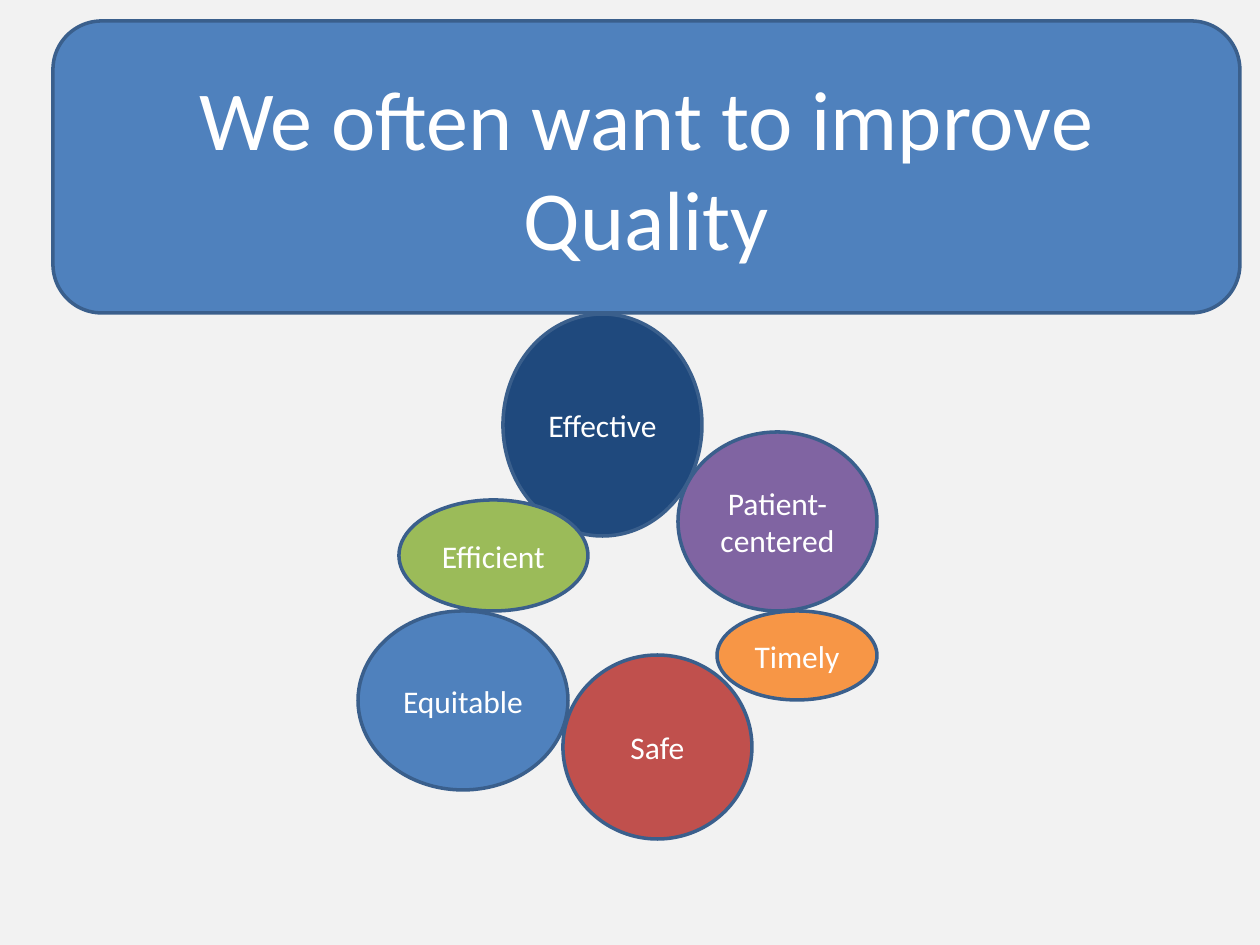
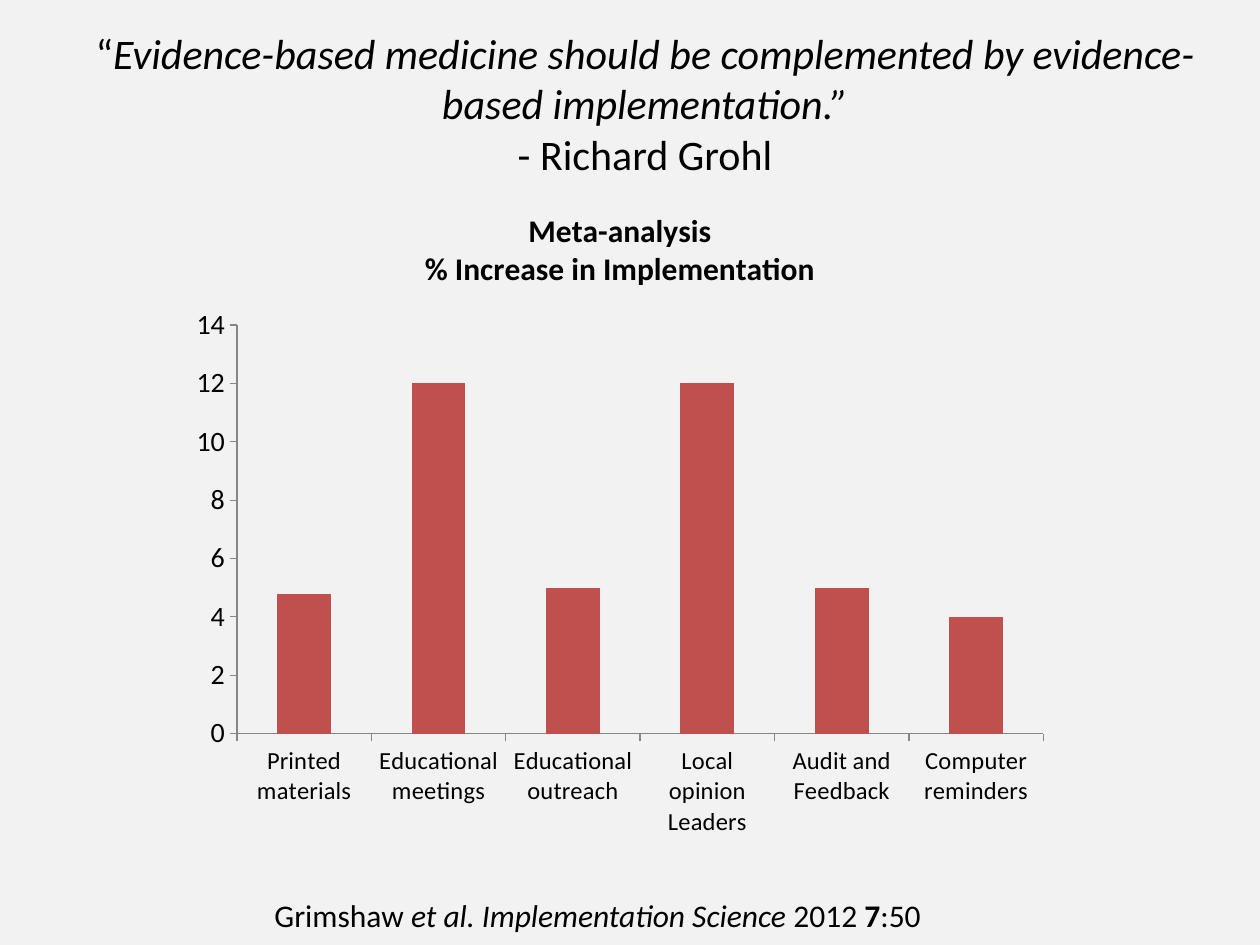
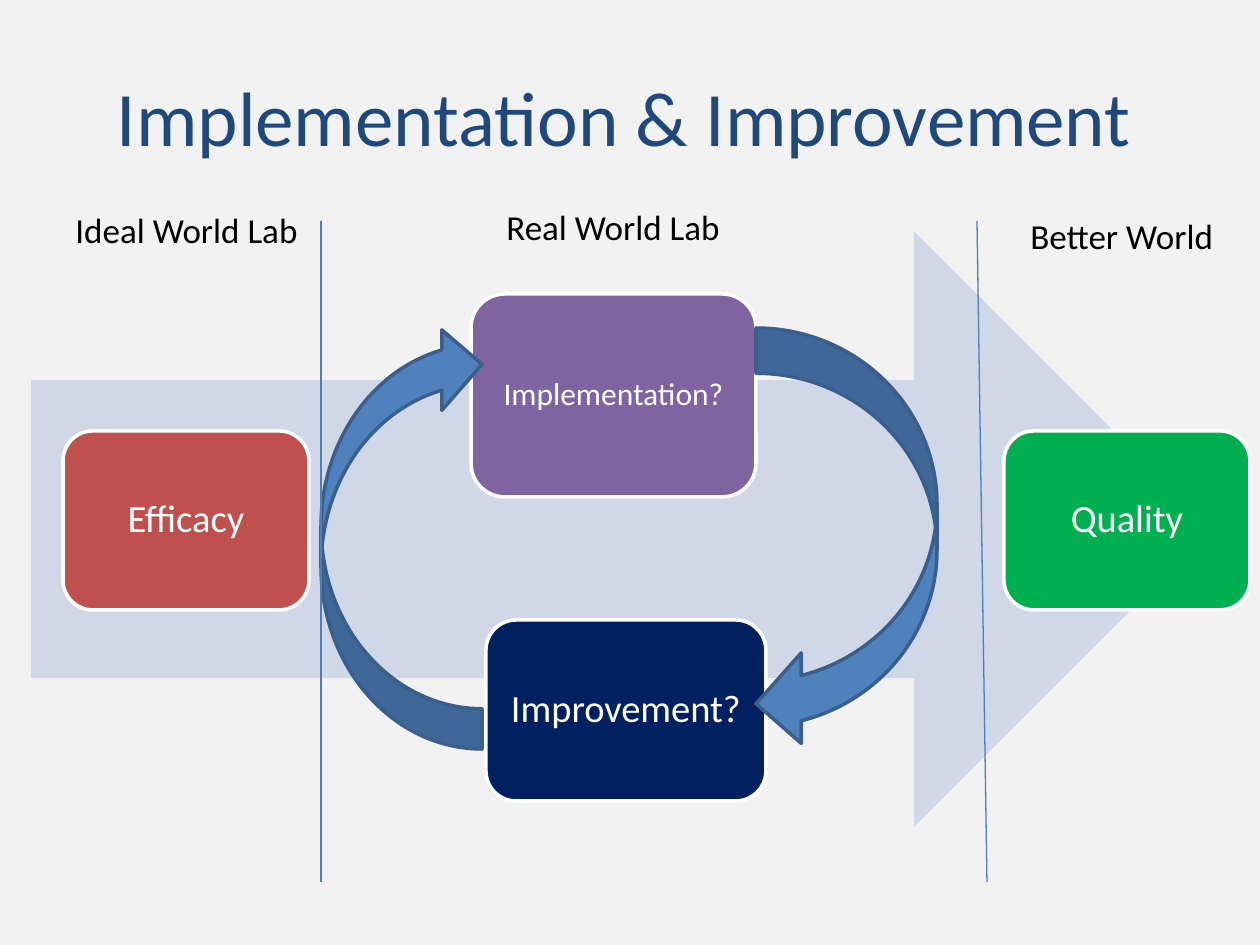
import pptx
import pptx.chart.data
import pptx.dml.color
import pptx.enum.chart
import pptx.enum.shapes
import pptx.enum.text
import pptx.oxml
import pptx.util

SHAPE = pptx.enum.shapes.MSO_SHAPE
ANCHOR = pptx.enum.text.MSO_ANCHOR
ALIGN = pptx.enum.text.PP_ALIGN
TICK = pptx.enum.chart.XL_TICK_MARK

# Shared look
FONT = "Calibri"
EMU_PER_PX = 914400 / 126
SLIDE_W, SLIDE_H = 1260, 945
TITLE_ONLY, BLANK = 5, 6
COLORS = {
    "background": "F2F2F2", "text": "000000", "white": "FFFFFF",
    "outline": "3A5F8C", "blue": "4F81BD", "dark_blue": "1F497D",
    "navy": "002060", "purple": "8064A2", "orange": "F79646",
    "light_green": "9BBB59", "green": "00B050", "red": "C0504D",
    "pale_blue": "D0D8E8", "divider": "4B7EBC", "axis": "868686",
}


def px(n):
    return round(n * EMU_PER_PX)


def rgb(name):
    return pptx.dml.color.RGBColor.from_string(COLORS[name])


def apply(obj, values):
    for name, value in values.items():
        setattr(obj, name, value)


def style_font(font, size, color="text", **extra):
    apply(font, {"name": FONT, "size": pptx.util.Pt(size), **extra})
    font.color.rgb = rgb(color)


def write_text(tf, paragraphs, size, color="text", align=ALIGN.LEFT,
               anchor=ANCHOR.TOP, spacing=1.0):
    """Each paragraph is a list of (text, font values) runs."""
    apply(tf, {"word_wrap": True, "vertical_anchor": anchor,
               "auto_size": pptx.enum.text.MSO_AUTO_SIZE.NONE})
    for i, runs in enumerate(paragraphs):
        p = tf.paragraphs[0] if i == 0 else tf.add_paragraph()
        apply(p, {"alignment": align, "line_spacing": spacing})
        for text, values in runs:
            r = p.add_run()
            r.text = text
            style_font(r.font, size, color, **values)


def add_title(slide, box, paragraphs, size, color="text", anchor=ANCHOR.MIDDLE):
    sp = slide.shapes.title
    apply(sp, dict(zip(("left", "top", "width", "height"), map(px, box))))
    write_text(sp.text_frame, paragraphs, size, color, ALIGN.CENTER, anchor)


def add_label(slide, box, runs, size):
    sp = slide.shapes.add_textbox(*map(px, box))
    write_text(sp.text_frame, [runs], size)


def add_block(slide, kind, box, fill, line="outline", text="", size=18,
              spacing=1.0):
    sp = slide.shapes.add_shape(kind, *map(px, box))
    sp.shadow.inherit = False
    sp.fill.solid()
    sp.fill.fore_color.rgb = rgb(fill)
    if line:
        sp.line.color.rgb = rgb(line)
        sp.line.width = pptx.util.Pt(2)
    else:
        sp.line.fill.background()
    if text:
        write_text(sp.text_frame, [[(text, {})]], size, "white", ALIGN.CENTER,
                   ANCHOR.MIDDLE, spacing)
    return sp


def add_divider(slide, x1, y1, x2, y2):
    line = slide.shapes.add_connector(
        pptx.enum.shapes.MSO_CONNECTOR.STRAIGHT, *map(px, (x1, y1, x2, y2)))
    line.line.color.rgb = rgb("divider")
    line.line.width = pptx.util.Pt(0.75)
    spPr = line._element.spPr
    spPr.append(pptx.oxml.parse_xml(
        '<a:effectLst xmlns:a='
        '"http://schemas.openxmlformats.org/drawingml/2006/main"/>'))


def add_column_chart(slide, box, title_lines, values):
    data = pptx.chart.data.CategoryChartData()
    data.categories = list(values)
    data.add_series("Series 1", list(values.values()))
    chart = slide.shapes.add_chart(
        pptx.enum.chart.XL_CHART_TYPE.COLUMN_CLUSTERED,
        *map(px, box), data).chart
    chart.has_legend = False
    style_font(chart.font, 10)

    # Title
    chart.has_title = True
    chart.chart_title.include_in_layout = False
    tf = chart.chart_title.text_frame
    tf.text = "\n".join(title_lines)
    for p in tf.paragraphs:
        style_font(p.runs[0].font, 18, bold=True)

    # Columns
    plot = chart.plots[0]
    apply(plot, {"gap_width": 150, "vary_by_categories": False})
    fill = plot.series[0].format.fill
    fill.solid()
    fill.fore_color.rgb = rgb("red")

    # Axes
    for axis, size in ((chart.category_axis, 14), (chart.value_axis, 16)):
        apply(axis, {"has_major_gridlines": False,
                     "major_tick_mark": TICK.OUTSIDE,
                     "minor_tick_mark": TICK.NONE})
        style_font(axis.tick_labels.font, size)
        axis.format.line.color.rgb = rgb("axis")
        axis.format.line.width = pptx.util.Pt(0.75)
    apply(chart.value_axis,
          {"minimum_scale": 0, "maximum_scale": 14, "major_unit": 2})


def build_quality(slide):
    # Dimensions of quality
    for text, fill, box in (
        ("Safe", "red", (563, 655, 189, 184)),
        ("Effective", "dark_blue", (503, 314, 199, 222)),
        ("Patient-centered", "purple", (678, 432, 199, 179)),
        ("Timely", "orange", (717, 611, 160, 89)),
        ("Efficient", "light_green", (399, 500, 189, 111)),
        ("Equitable", "blue", (358, 611, 210, 179)),
    ):
        add_block(slide, SHAPE.OVAL, box, fill, text=text)
    # Banner
    add_block(slide, SHAPE.ROUNDED_RECTANGLE, (53, 21, 1187, 292), "blue",
              text="We often want to improve Quality", size=48)


def build_evidence(slide):
    italic = {"italic": True}
    add_title(slide, (73, 21, 1144, 165), [
        [("“", {}),
         ("Evidence-based medicine should be complemented by "
          "evidence-based implementation.”", italic)],
        [("- Richard Grohl", {})],
    ], 24, anchor=ANCHOR.TOP)
    add_column_chart(
        slide, (179, 186, 882, 664),
        ("Meta-analysis", "% Increase in Implementation"),
        {"Printed materials": 4.8, "Educational meetings": 12,
         "Educational outreach": 5, "Local opinion Leaders": 12,
         "Audit and Feedback": 5, "Computer reminders": 4})
    # Citation
    add_label(slide, (262, 890, 840, 50), [
        ("Grimshaw ", {}), ("et al. Implementation Science", italic),
        (" 2012 ", {}), ("7", {"bold": True}), (":50", {})], 18)


def build_improvement(slide):
    add_title(slide, (21, 42, 1207, 147),
              [[("Implementation & Improvement", {})]], 44, "dark_blue")
    # Path from lab to better world
    add_block(slide, SHAPE.RIGHT_ARROW, (31, 231, 1181, 596), "pale_blue", None)
    for text, fill, size, box in (
        ("Efficacy", "red", 22, (63, 431, 246, 179)),
        ("Improvement?", "navy", 22, (486, 620, 280, 181)),
        ("Implementation?", "purple", 18, (471, 294, 285, 203)),
        ("Quality", "green", 22, (1004, 431, 246, 179)),
    ):
        add_block(slide, SHAPE.ROUNDED_RECTANGLE, box, fill, "white", text,
                  size, 0.9)
    # Cycle arrows
    for box, turn in (((321, 324, 161, 425), 180), ((756, 328, 181, 421), 0)):
        add_block(slide, SHAPE.CURVED_LEFT_ARROW, box, "blue").rotation = turn
    # Worlds and the dividers between them
    for x_bottom, x_top in ((321, 321), (987, 977)):
        add_divider(slide, x_bottom, 882, x_top, 221)
    for text, x, y, w in (("Real World Lab", 494, 199, 262),
                          ("Ideal World Lab", 63, 202, 258),
                          ("Better World", 1018, 208, 242)):
        add_label(slide, (x, y, w, 55), [(text, {})], 20)


def main():
    prs = pptx.Presentation()
    apply(prs, {"slide_width": px(SLIDE_W), "slide_height": px(SLIDE_H)})
    fill = prs.slide_master.background.fill
    fill.solid()
    fill.fore_color.rgb = rgb("background")
    for build, layout in ((build_quality, BLANK), (build_evidence, TITLE_ONLY),
                          (build_improvement, TITLE_ONLY)):
        build(prs.slides.add_slide(prs.slide_layouts[layout]))
    prs.save("out.pptx")


if __name__ == "__main__":
    main()
